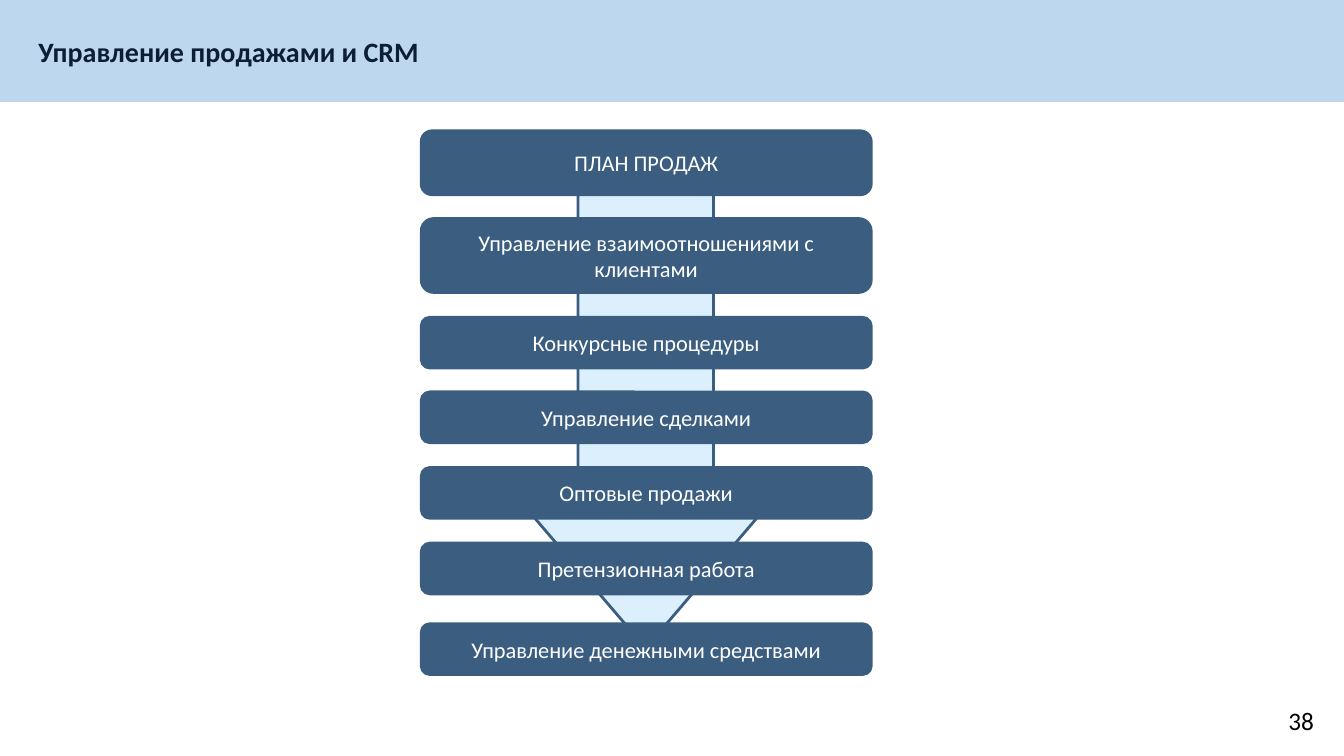
from dataclasses import dataclass

from pptx import Presentation
from pptx.dml.color import RGBColor
from pptx.enum.shapes import MSO_SHAPE as Shape
from pptx.enum.text import MSO_ANCHOR as Anchor, PP_ALIGN as Align
from pptx.util import Inches, Pt

TITLE = "Управление продажами и CRM"
PAGE_NUMBER = "38"
# Stage name, top, height (inches)
STAGES = [
    ("ПЛАН ПРОДАЖ", 1.3, 0.63),
    ("Управление взаимоотношениями с клиентами", 2.17, 0.73),
    ("Конкурсные процедуры", 3.15, 0.5),
    ("Управление сделками", 3.89, 0.5),
    ("Оптовые продажи", 4.64, 0.5),
    ("Претензионная работа", 5.39, 0.5),
    ("Управление денежными средствами", 6.19, 0.5),
]
STAGE_LEFT, STAGE_WIDTH = 4.18, 4.46


@dataclass(frozen=True)
class Theme:
    font: str = "Calibri"
    band: str = "BDD7EE"
    arrow: str = "DBF0FC"
    stage: str = "3A5D80"
    title: str = "0C1E34"
    stage_text: str = "FFFFFF"
    page_text: str = "000000"
    title_size: int = 20
    stage_size: int = 16
    page_size: int = 18


THEME = Theme()


def add_block(slide, preset, box, fill, line_width=0):
    """Add a flat shape, outlined in the stage colour if line_width is given."""
    block = slide.shapes.add_shape(preset, *map(Inches, box))
    block.shadow.inherit = False
    block.fill.solid()
    block.fill.fore_color.rgb = RGBColor.from_string(fill)
    if line_width:
        block.line.color.rgb = RGBColor.from_string(THEME.stage)
        block.line.width = Pt(line_width)
    else:
        block.line.fill.background()
    return block


def write(holder, text, size, color, align, anchor=Anchor.TOP, bold=False):
    frame = holder.text_frame
    frame.text = text
    frame.word_wrap = True
    frame.vertical_anchor = anchor
    paragraph = frame.paragraphs[0]
    paragraph.alignment = align
    font = paragraph.font
    font.name, font.size, font.bold = THEME.font, Pt(size), bold
    font.color.rgb = RGBColor.from_string(color)


def add_header(slide):
    band = add_block(slide, Shape.RECTANGLE, (0, -0.01, 13.33, 1.02), THEME.band)
    title = slide.shapes.title
    title.left, title.top = Inches(0.28), Inches(0.29)
    title.width, title.height = Inches(9.56), Inches(0.44)
    write(title, TITLE, THEME.title_size, THEME.title, Align.LEFT, bold=True)
    title.element.addprevious(band.element)  # band goes behind the title


def add_stages(slide):
    arrow = add_block(slide, Shape.DOWN_ARROW, (5.06, 1.84, 2.69, 4.59), THEME.arrow, 2)
    arrow.adjustments[0], arrow.adjustments[1] = 0.5, 0.586
    for name, top, height in STAGES:
        stage = add_block(slide, Shape.ROUNDED_RECTANGLE,
                          (STAGE_LEFT, top, STAGE_WIDTH, height), THEME.stage, 2.25)
        write(stage, name, THEME.stage_size, THEME.stage_text, Align.CENTER, Anchor.MIDDLE)


def main():
    deck = Presentation()
    deck.slide_width, deck.slide_height = Inches(13.33), Inches(7.5)
    slide = deck.slides.add_slide(deck.slide_layouts.get_by_name("Title Only"))
    add_header(slide)
    add_stages(slide)
    page = slide.shapes.add_textbox(*map(Inches, (10.13, 6.95, 3, 0.4)))
    write(page, PAGE_NUMBER, THEME.page_size, THEME.page_text, Align.RIGHT)
    deck.save("out.pptx")


if __name__ == "__main__":
    main()
